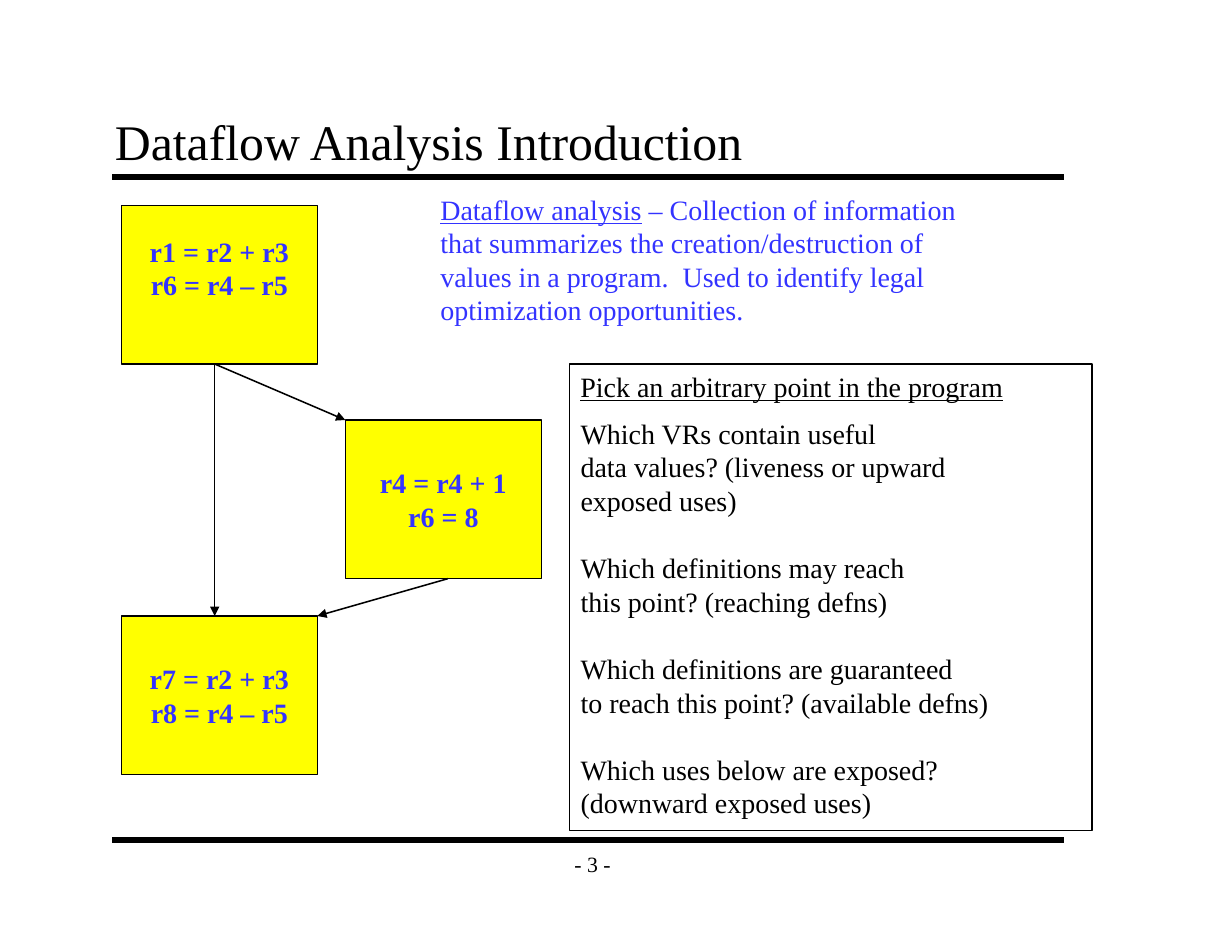
from dataclasses import dataclass
from typing import Any

from lxml.etree import SubElement
from pptx import Presentation
from pptx.dml.color import RGBColor
from pptx.enum.shapes import MSO_CONNECTOR, MSO_SHAPE
from pptx.enum.text import MSO_ANCHOR, MSO_AUTO_SIZE, PP_ALIGN
from pptx.oxml.ns import qn
from pptx.util import Inches, Pt

COLORS = {"ink": "000000", "code": "3333FF", "block": "FFFF00"}
CELLS_PER_INCH = 12
BLOCK_COLS, BLOCK_ROWS = 21, 17
LINE_PITCH = 21.6


def grid(*cells):
    return [Inches(cell / CELLS_PER_INCH) for cell in cells]


def color(name):
    return RGBColor.from_string(COLORS[name])


@dataclass
class Board:
    slide: Any
    font: str = "Times New Roman"
    size: float = 18

    def set_text(self, frame, lines, ink="ink", size=None, bold=False,
                 align=PP_ALIGN.LEFT, anchor=MSO_ANCHOR.TOP, inset=(0.1, 0.05)):
        frame.word_wrap = True
        frame.auto_size = MSO_AUTO_SIZE.NONE
        frame.vertical_anchor = anchor
        frame.margin_left = frame.margin_right = Inches(inset[0])
        frame.margin_top = frame.margin_bottom = Inches(inset[1])
        for index, line in enumerate(lines):
            paragraph = frame.add_paragraph() if index else frame.paragraphs[0]
            paragraph.alignment = align
            paragraph.space_before = Pt(0)
            for words, underlined in [(line, False)] if isinstance(line, str) else line:
                run = paragraph.add_run()
                run.text = words
                run.font.name = self.font
                run.font.size = Pt(size or self.size)
                run.font.bold = bold
                run.font.underline = underlined
                run.font.color.rgb = color(ink)

    def place(self, holder, area):
        holder.left, holder.top, holder.width, holder.height = grid(*area)

    def title(self, words, area):
        heading = self.slide.shapes.title
        self.place(heading, area)
        self.set_text(heading.text_frame, [words], size=32,
                      anchor=MSO_ANCHOR.BOTTOM, inset=(0.11, 0.06))

    def questions(self, groups, area):
        body = self.slide.placeholders[1]
        self.place(body, area)
        self.set_text(body.text_frame, [line for group in groups for line in group])
        openers = {group[0] for group in groups[1:]}
        for paragraph in body.text_frame.paragraphs:
            properties = paragraph._p.get_or_add_pPr()
            properties.set("marL", "0")
            properties.set("indent", "0")
            if paragraph.text in openers:
                paragraph.space_before = Pt(LINE_PITCH)
            SubElement(properties, qn("a:buNone"))

    def label(self, lines, area, **style):
        self.set_text(self.slide.shapes.add_textbox(*grid(*area)).text_frame, lines, **style)

    def box(self, area, fill=None):
        box = self.slide.shapes.add_shape(MSO_SHAPE.RECTANGLE, *grid(*area))
        box.shadow.inherit = False
        box.line.color.rgb = color("ink")
        box.line.width = Pt(1)
        if fill:
            box.fill.solid()
            box.fill.fore_color.rgb = color(fill)
        else:
            box.fill.background()
        return box

    def code_block(self, col, row, lines, lift=0):
        block = self.box((col, row, BLOCK_COLS, BLOCK_ROWS), "block")
        self.set_text(block.text_frame, lines, "code", bold=True,
                      align=PP_ALIGN.CENTER, anchor=MSO_ANCHOR.MIDDLE)
        block.text_frame.margin_bottom += Pt(lift)

    def line(self, start, end, width=1, arrow=False):
        line = self.slide.shapes.add_connector(MSO_CONNECTOR.STRAIGHT, *grid(*start, *end))
        line.line.color.rgb = color("ink")
        line.line.width = Pt(width)
        if arrow:
            SubElement(line.line._get_or_add_ln(), qn("a:tailEnd"), type="triangle")
        SubElement(line._element.spPr, qn("a:effectLst"))


def main():
    deck = Presentation()
    deck.slide_width, deck.slide_height = Inches(11), Inches(8.5)
    board = Board(deck.slides.add_slide(deck.slide_layouts[1]))

    for rule_row in (19, 90):
        board.line((12, rule_row), (114, rule_row), width=4)
    board.label(["- 3 -"], (59, 90, 9, 5), size=14,
                align=PP_ALIGN.CENTER, anchor=MSO_ANCHOR.MIDDLE)
    board.title("Dataflow Analysis Introduction", (11, 11, 102, 8))

    board.questions([
        ["Which VRs contain useful", "data values? (liveness or upward", "exposed uses)"],
        ["Which definitions may reach", "this point? (reaching defns)"],
        ["Which definitions are guaranteed", "to reach this point? (available defns)"],
        ["Which uses below are exposed?", "(downward exposed uses)"],
    ], (61, 44, 56, 45))
    board.label([[("Pick an arbitrary point in the program", True)]], (61, 39, 56, 5))

    board.code_block(13, 22, ["r1 = r2 + r3", "r6 = r4 – r5"], lift=LINE_PITCH)
    board.code_block(37, 45, ["r4 = r4 + 1", "r6 = 8"])
    board.code_block(13, 66, ["r7 = r2 + r3", "r8 = r4 – r5"])
    for start, end in [((23, 39), (37, 45)), ((23, 39), (23, 66)), ((48, 62), (34, 66))]:
        board.line(start, end, arrow=True)

    board.label([
        [("Dataflow analysis", True), (" – Collection of information", False)],
        "that summarizes the creation/destruction of",
        "values in a program.  Used to identify legal",
        "optimization opportunities.",
    ], (46, 20, 60, 16), ink="code")
    board.box((61, 39, 56, 50))

    deck.save("out.pptx")


if __name__ == "__main__":
    main()
